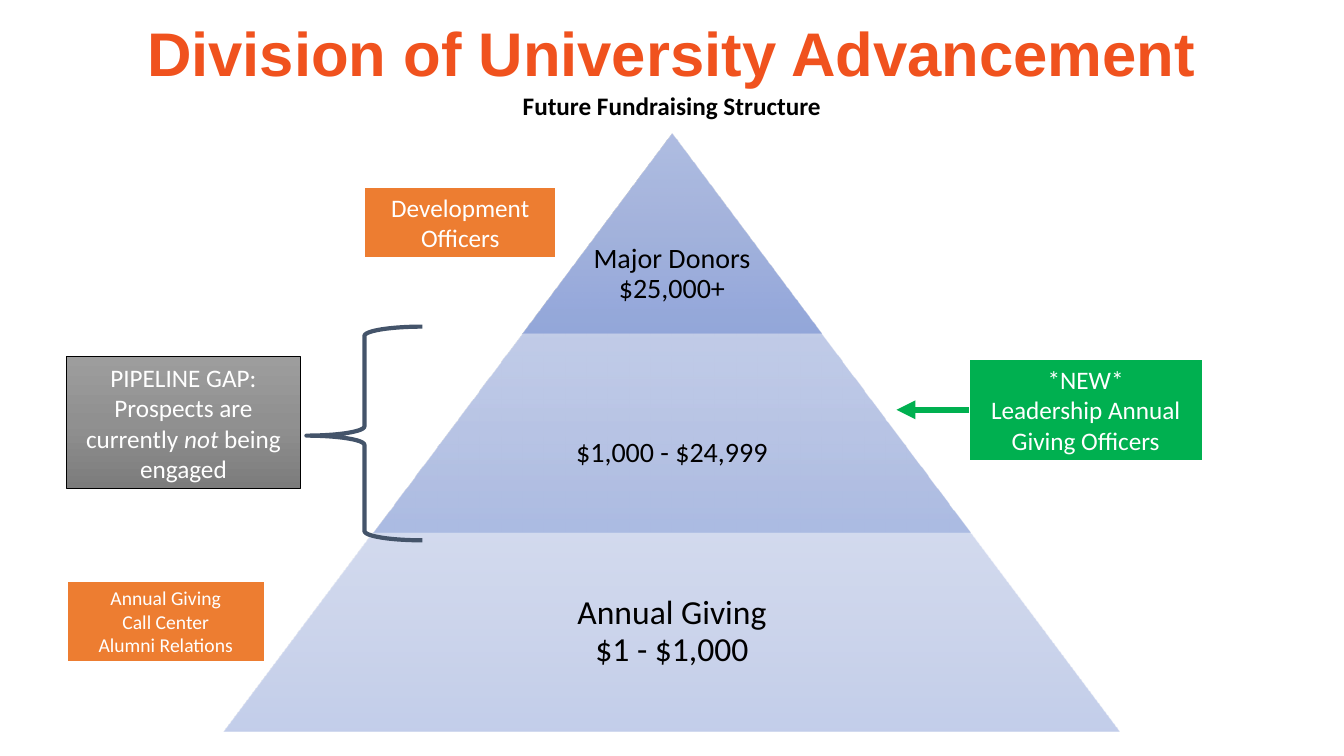
import lxml.etree
import pptx
import pptx.dml.color
import pptx.enum.dml
import pptx.enum.shapes
import pptx.enum.text
import pptx.oxml
import pptx.oxml.ns
import pptx.util

SHAPE = pptx.enum.shapes.MSO_SHAPE
FIT = pptx.enum.text.MSO_AUTO_SIZE
WIDTH, HEIGHT = pptx.util.Inches(13.33), pptx.util.Inches(7.5)
COLUMN, ROW = WIDTH / 100, HEIGHT / 100
TIER_TOP, TIER_ROWS, TIER_STEP = 17.73, 26.35, 11.11
TIER_COLORS = ("A8B7DF", "9AABD9", "889ED7")
GAP_COLORS = ("9D9D9D", "909090", "7C7C7C")


def grid(left, top, width, height):
    """Turn columns and rows into a frame of slide lengths."""
    return [round(n * unit) for n, unit in zip((left, top, width, height), (COLUMN, ROW) * 2)]


def color(hex_text):
    """Return the colour for a hex string."""
    return pptx.dml.color.RGBColor.from_string(hex_text)


def set_line(shape, hex_text, points):
    """Give an outline its colour and width."""
    shape.line.color.rgb = color(hex_text)
    shape.line.width = pptx.util.Pt(points)


def set_gradient(shape, colors, opacity=100):
    """Fill a shape from top to bottom with three colours."""
    shape.fill.gradient()
    shape.fill.gradient_angle = 270
    stops = shape._element.spPr.find(".//" + pptx.oxml.ns.qn("a:gsLst"))
    for stop in list(stops):
        stops.remove(stop)
    for position, hex_text in zip((0, 50000, 100000), colors):
        stop = lxml.etree.SubElement(stops, pptx.oxml.ns.qn("a:gs"), pos=str(position))
        tone = lxml.etree.SubElement(stop, pptx.oxml.ns.qn("a:srgbClr"), val=hex_text)
        if opacity < 100:
            lxml.etree.SubElement(tone, pptx.oxml.ns.qn("a:alpha"), val=str(opacity * 1000))


def write(box, spans, size, hex_text, spacing=1.0, fit=FIT.SHAPE_TO_FIT_TEXT, **font):
    """Write one centred paragraph whose spans may hold line breaks."""
    frame = box.text_frame
    frame.word_wrap = True
    frame.auto_size = fit
    frame.vertical_anchor = pptx.enum.text.MSO_ANCHOR.MIDDLE
    para = frame.paragraphs[0]
    para.alignment = pptx.enum.text.PP_ALIGN.CENTER
    para.line_spacing = spacing
    for text, extra in spans:
        for index, line in enumerate(text.split("\n")):
            if index:
                para.add_line_break()
            span = para.add_run()
            span.text = line
            values = {"name": "Calibri", "size": pptx.util.Pt(size), **font, **extra}
            for name, value in values.items():
                setattr(span.font, name, value)
            span.font.color.rgb = color(hex_text)


def add_preset(page, kind, frame):
    """Add a preset shape without a shadow."""
    shape = page.shapes.add_shape(kind, *grid(*frame))
    shape.shadow.inherit = False
    return shape


def add_tier(page, index, text, size, opacity, drop):
    """Add one pyramid tier and its label, lowered by some rows."""
    top = TIER_TOP + index * TIER_ROWS
    half = TIER_STEP * (index + 1)
    frame = (50 - half, top, 2 * half, TIER_ROWS)
    tier = add_preset(page, SHAPE.TRAPEZOID, frame)
    tier.adjustments[0] = 0.75
    tier.line.fill.background()
    set_gradient(tier, TIER_COLORS, opacity)
    label = page.shapes.add_textbox(*grid(50 - half, top + drop, 2 * half, TIER_ROWS))
    write(label, [(text, {})], size, "000000", 0.9, FIT.NONE)


def add_box(page, frame, fill, spans, size=18):
    """Add a filled rectangle with white text."""
    box = add_preset(page, SHAPE.RECTANGLE, frame)
    box.fill.solid()
    box.fill.fore_color.rgb = color(fill)
    set_line(box, "FFFFFF", 1.5)
    write(box, spans, size, "FFFFFF")
    return box


def add_brace(page, frame):
    """Add the brace that opens toward the pyramid."""
    brace = add_preset(page, SHAPE.RIGHT_BRACE, frame)
    brace.rotation = 180
    brace.adjustments[0], brace.adjustments[1] = 0.08, 0.49
    brace.fill.background()
    set_line(brace, "44546A", 3)


def add_arrow(page, box, end_column, hex_text):
    """Add an arrow running left from the middle of a box's left side."""
    middle = box.top + box.height // 2
    arrow = page.shapes.add_connector(
        pptx.enum.shapes.MSO_CONNECTOR.STRAIGHT, box.left, middle, round(end_column * COLUMN), middle)
    arrow.begin_connect(box, 1)
    set_line(arrow, hex_text, 4.5)
    lxml.etree.SubElement(arrow.line._get_or_add_ln(), pptx.oxml.ns.qn("a:tailEnd"), type="triangle")
    lxml.etree.SubElement(arrow._element.spPr, pptx.oxml.ns.qn("a:effectLst"))


def main():
    """Build the fundraising pyramid slide."""
    deck = pptx.Presentation()
    deck.slide_width, deck.slide_height = WIDTH, HEIGHT
    page = deck.slides.add_slide(deck.slide_layouts[5])

    title = page.shapes.title
    title.left, title.top, title.width, title.height = grid(2.33, 1.07, 95.33, 12.8)
    write(title, [("Division of University Advancement", {})], 44, "F0521E", 0.9, FIT.NONE,
          name="Arial", bold=True)

    add_tier(page, 0, "Major Donors\n$25,000+", 20, 90, 5.4)
    add_tier(page, 1, "$1,000 - $24,999", 20, 70, 2.7)
    add_tier(page, 2, "Annual Giving\n$1 - $1,000", 24, 50, 0)

    add_box(page, (4.95, 76.8, 14.77, 10.8), "ED7D31",
            [("Annual Giving\nCall Center\nAlumni Relations", {})], 14)
    add_box(page, (27.08, 24.67, 14.33, 9.47), "ED7D31", [("Development Officers", {})])
    gap = add_box(page, (4.95, 47.2, 17.4, 17.47), GAP_COLORS[1],
                  [("PIPELINE GAP:\nProspects are currently ", {}), ("not", {"italic": True}),
                   (" being engaged", {})])
    set_gradient(gap, GAP_COLORS)
    set_line(gap, "000000", 0.5)
    add_brace(page, (22.8, 43.2, 8.63, 28.27))
    officers = add_box(page, (72.08, 47.47, 17.4, 13.47), "00B050",
                       [("*NEW*\nLeadership Annual Giving Officers", {})])
    subtitle = page.shapes.add_textbox(*grid(35.25, 11.33, 29.48, 5.33))
    write(subtitle, [("Future Fundraising Structure", {})], 18, "000000", bold=True)
    add_arrow(page, officers, 66.7, "00B050")
    deck.save("out.pptx")


if __name__ == "__main__":
    main()
